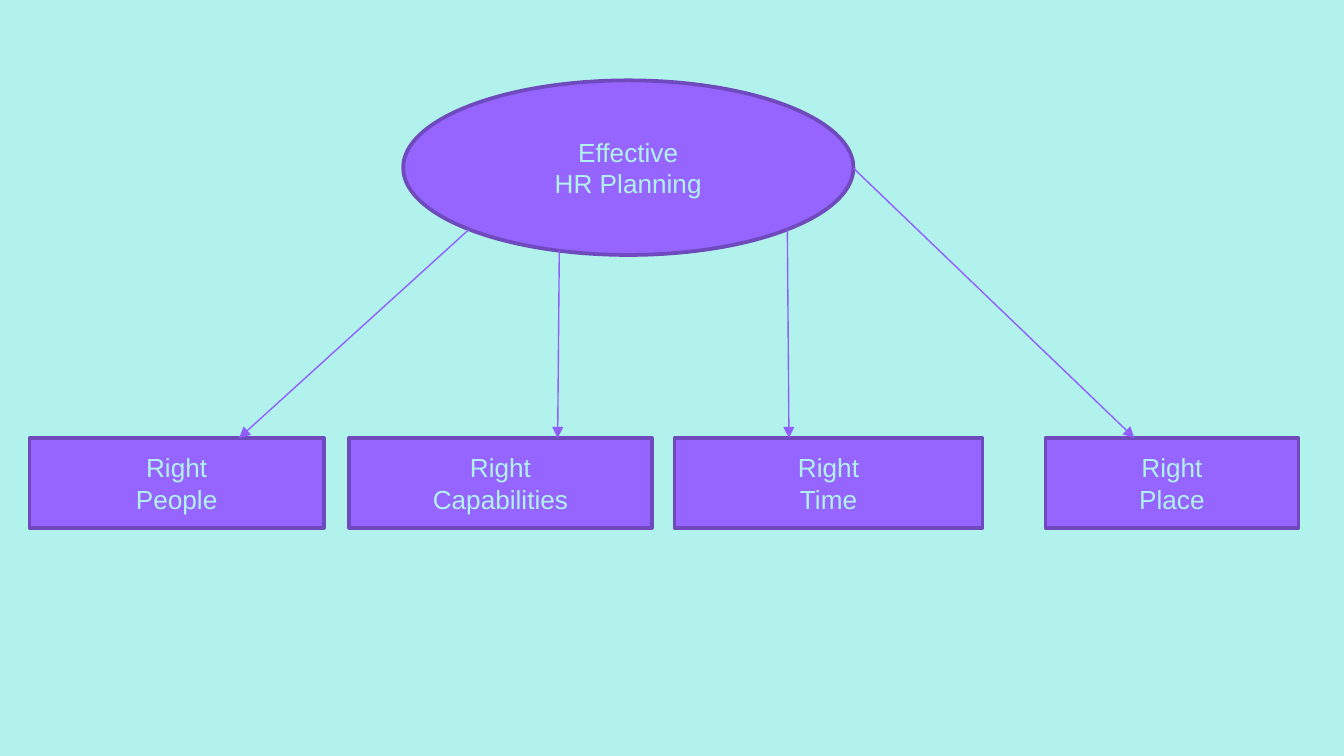
from pptx import Presentation
from pptx.dml.color import RGBColor
from pptx.enum.shapes import MSO_CONNECTOR, MSO_SHAPE
from pptx.enum.text import MSO_ANCHOR, PP_ALIGN
from pptx.oxml.ns import qn
from pptx.util import Cm, Pt
from lxml import etree

OVAL, RECT = MSO_SHAPE.OVAL, MSO_SHAPE.RECTANGLE
STRAIGHT = MSO_CONNECTOR.STRAIGHT
MIDDLE, CENTER = MSO_ANCHOR.MIDDLE, PP_ALIGN.CENTER

HEX = {"back": "B2F2ED", "fill": "9664FF", "edge": "6F4ABD", "arrow": "915EFD"}
color = {name: RGBColor.from_string(code) for name, code in HEX.items()}

deck = Presentation()
deck.slide_width, deck.slide_height = Cm(25.4), Cm(14.29)
slide = deck.slides.add_slide(deck.slide_layouts[6])
slide.background.fill.solid()
slide.background.fill.fore_color.rgb = color["back"]

# Goal on top, its four parts in a row below
TOP, HIGH = 8.28, 1.7
nodes = [(OVAL, 7.62, 1.52, 8.51, 3.3, "Effective\nHR Planning")]
for left, width, word in [
    (0.56, 5.56, "People"),
    (6.6, 5.72, "Capabilities"),
    (12.75, 5.82, "Time"),
    (19.76, 4.78, "Place"),
]:
    nodes.append((RECT, left, TOP, width, HIGH, "Right\n" + word))

for kind, left, top, width, height, text in nodes:
    node = slide.shapes.add_shape(kind, Cm(left), Cm(top), Cm(width), Cm(height))
    node.shadow.inherit = False
    node.fill.solid()
    node.fill.fore_color.rgb = color["fill"]
    node.line.color.rgb = color["edge"]
    node.line.width = Pt(2)
    frame = node.text_frame
    frame.text = text
    frame.word_wrap = True
    frame.vertical_anchor = MIDDLE
    for para in frame.paragraphs:
        para.alignment = CENTER
        para.font.name = "Arial"
        para.font.size = Pt(14)
        para.font.color.rgb = color["back"]

# Arrows from the goal's rim to the top edge of each part
for x1, y1, x2 in [
    (8.86, 4.34, 4.52),
    (10.57, 4.74, 10.54),
    (14.88, 4.34, 14.91),
    (16.13, 3.18, 21.44),
]:
    arrow = slide.shapes.add_connector(STRAIGHT, Cm(x1), Cm(y1), Cm(x2), Cm(TOP))
    arrow.line.color.rgb = color["arrow"]
    arrow.line.width = Pt(0.75)
    etree.SubElement(arrow.line._get_or_add_ln(), qn("a:tailEnd"), type="triangle")
    etree.SubElement(arrow._element.spPr, qn("a:effectLst"))

deck.save("out.pptx")
